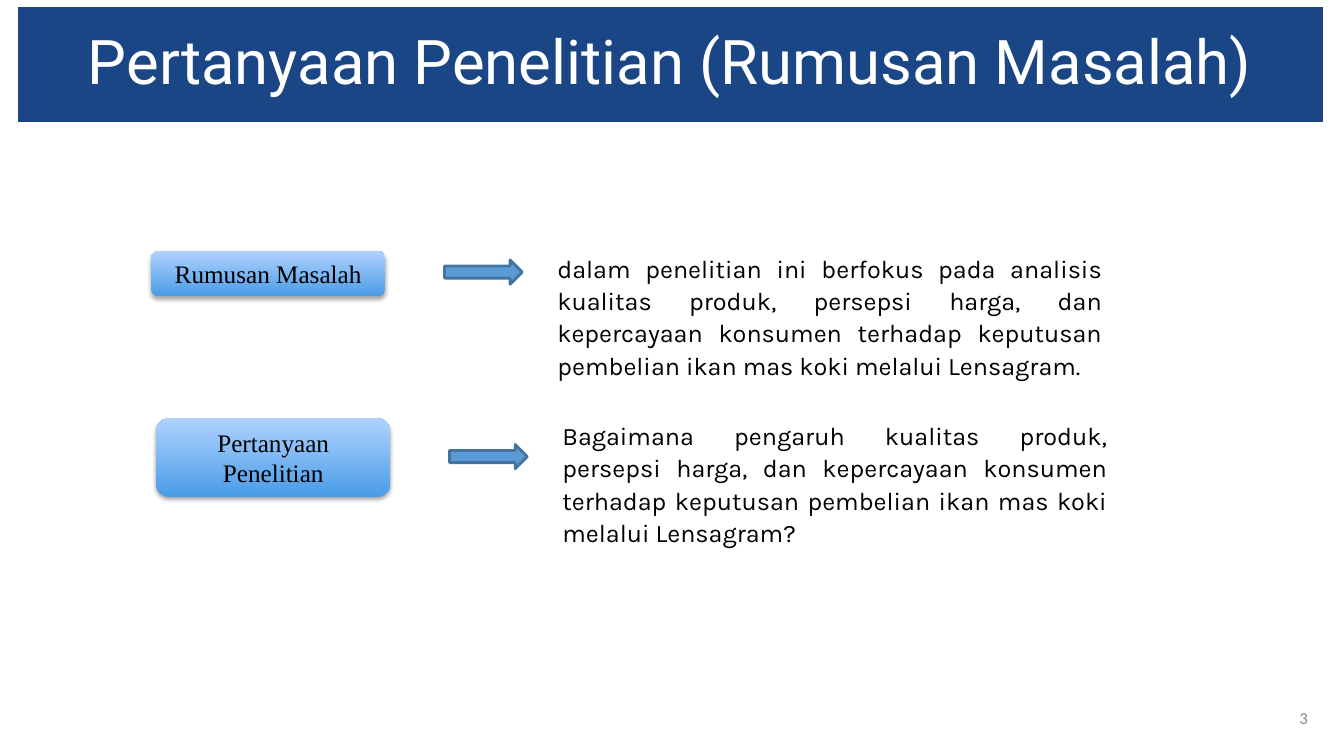
import pptx
import pptx.util
import pptx.dml.color
import pptx.enum.shapes
import pptx.enum.text
import pptx.oxml
import pptx.oxml.ns

Inches = pptx.util.Inches
Pt = pptx.util.Pt
RGBColor = pptx.dml.color.RGBColor
Shape = pptx.enum.shapes.MSO_SHAPE
Align = pptx.enum.text.PP_ALIGN
Anchor = pptx.enum.text.MSO_ANCHOR

TITLE = "Pertanyaan Penelitian (Rumusan Masalah)"
PAGE_NUMBER = "3"
ROWS = [
    {"label": "Rumusan Masalah", "left": 1.5, "top": 2.49, "height": 0.45,
     "arrow_top": 2.58, "text_top": 2.44,
     "text": "dalam penelitian ini berfokus pada analisis kualitas produk, persepsi harga, "
             "dan kepercayaan konsumen terhadap keputusan pembelian ikan mas koki "
             "melalui Lensagram."},
    {"label": "Pertanyaan Penelitian", "left": 1.55, "top": 4.15, "height": 0.78,
     "arrow_top": 4.41, "text_top": 4.1,
     "text": "Bagaimana pengaruh kualitas produk, persepsi harga, dan kepercayaan konsumen "
             "terhadap keputusan pembelian ikan mas koki melalui Lensagram?"},
]
ARROW_OFFSET = 2.91
TEXT_OFFSET = 3.93

NAVY = RGBColor(0x1B, 0x46, 0x85)
WHITE = RGBColor(0xFF, 0xFF, 0xFF)
BLACK = RGBColor(0, 0, 0)
GREY = RGBColor(0x88, 0x88, 0x88)
LABEL_DARK = RGBColor(0x49, 0x9C, 0xE7)
LABEL_LIGHT = RGBColor(0xB0, 0xD2, 0xFF)
ARROW_FILL = RGBColor(0x5B, 0x9B, 0xD5)
ARROW_LINE = RGBColor(0x43, 0x73, 0x9E)

SHADOW_XML = (
    f'<a:outerShdw {pptx.oxml.ns.nsdecls("a")} blurRad="{Pt(3.1)}" dist="{Pt(1.8)}" '
    'dir="5400000" rotWithShape="0"><a:srgbClr val="000000"><a:alpha val="35000"/>'
    '</a:srgbClr></a:outerShdw>'
)


def write(box, text, font, size, color, align, anchor, spacing=None, after=None):
    """Put one formatted paragraph into a box."""
    frame = box.text_frame
    frame.text = text
    frame.word_wrap = True
    frame.auto_size = pptx.enum.text.MSO_AUTO_SIZE.NONE
    frame.vertical_anchor = anchor
    para = frame.paragraphs[0]
    para.alignment = align
    if spacing:
        para.line_spacing = spacing
    if after:
        para.space_after = Pt(after)
    span = para.runs[0]
    span.font.name = font
    span.font.size = Pt(size)
    span.font.color.rgb = color


def add_label(page, row):
    """Draw the gradient label of a row."""
    label = page.shapes.add_shape(
        Shape.ROUNDED_RECTANGLE, Inches(row["left"]), Inches(row["top"]),
        Inches(2.32), Inches(row["height"]))
    label.fill.gradient()
    label.fill.gradient_angle = 90
    for stop, color in zip(label.fill.gradient_stops, (LABEL_DARK, LABEL_LIGHT)):
        stop.color.rgb = color
    label.line.fill.background()
    label.shadow.inherit = False
    effects = label.element.spPr.find(pptx.oxml.ns.qn("a:effectLst"))
    effects.append(pptx.oxml.parse_xml(SHADOW_XML))
    write(label, row["label"], "Times New Roman", 18, BLACK, Align.CENTER, Anchor.MIDDLE)


def add_arrow(page, row):
    """Draw the arrow that leads from the label to its text."""
    arrow = page.shapes.add_shape(
        Shape.RIGHT_ARROW, Inches(row["left"] + ARROW_OFFSET), Inches(row["arrow_top"]),
        Inches(0.77), Inches(0.24))
    arrow.fill.solid()
    arrow.fill.fore_color.rgb = ARROW_FILL
    arrow.line.color.rgb = ARROW_LINE
    arrow.line.width = Pt(2)
    arrow.shadow.inherit = False


def main():
    """Build the research question slide."""
    deck = pptx.Presentation()
    deck.slide_width = Inches(13.33)
    deck.slide_height = Inches(7.5)
    page = deck.slides.add_slide(deck.slide_layouts[5])

    title = page.shapes.title
    title.left, title.top = Inches(0.18), Inches(0.07)
    title.width, title.height = Inches(12.94), Inches(1.14)
    title.fill.solid()
    title.fill.fore_color.rgb = NAVY
    write(title, TITLE, "Roboto", 44, WHITE, Align.CENTER, Anchor.MIDDLE, spacing=0.9)

    for row in ROWS:
        add_label(page, row)
        add_arrow(page, row)
        box = page.shapes.add_textbox(
            Inches(row["left"] + TEXT_OFFSET), Inches(row["text_top"]),
            Inches(5.6), Inches(1.38))
        write(box, row["text"], "Karla", 18, BLACK, Align.JUSTIFY, Anchor.TOP,
              spacing=1.07, after=8)

    number = page.shapes.add_textbox(Inches(12.5), Inches(6.92), Inches(0.57), Inches(0.4))
    write(number, PAGE_NUMBER, "Calibri", 12, GREY, Align.RIGHT, Anchor.MIDDLE)
    deck.save("out.pptx")


if __name__ == "__main__":
    main()
